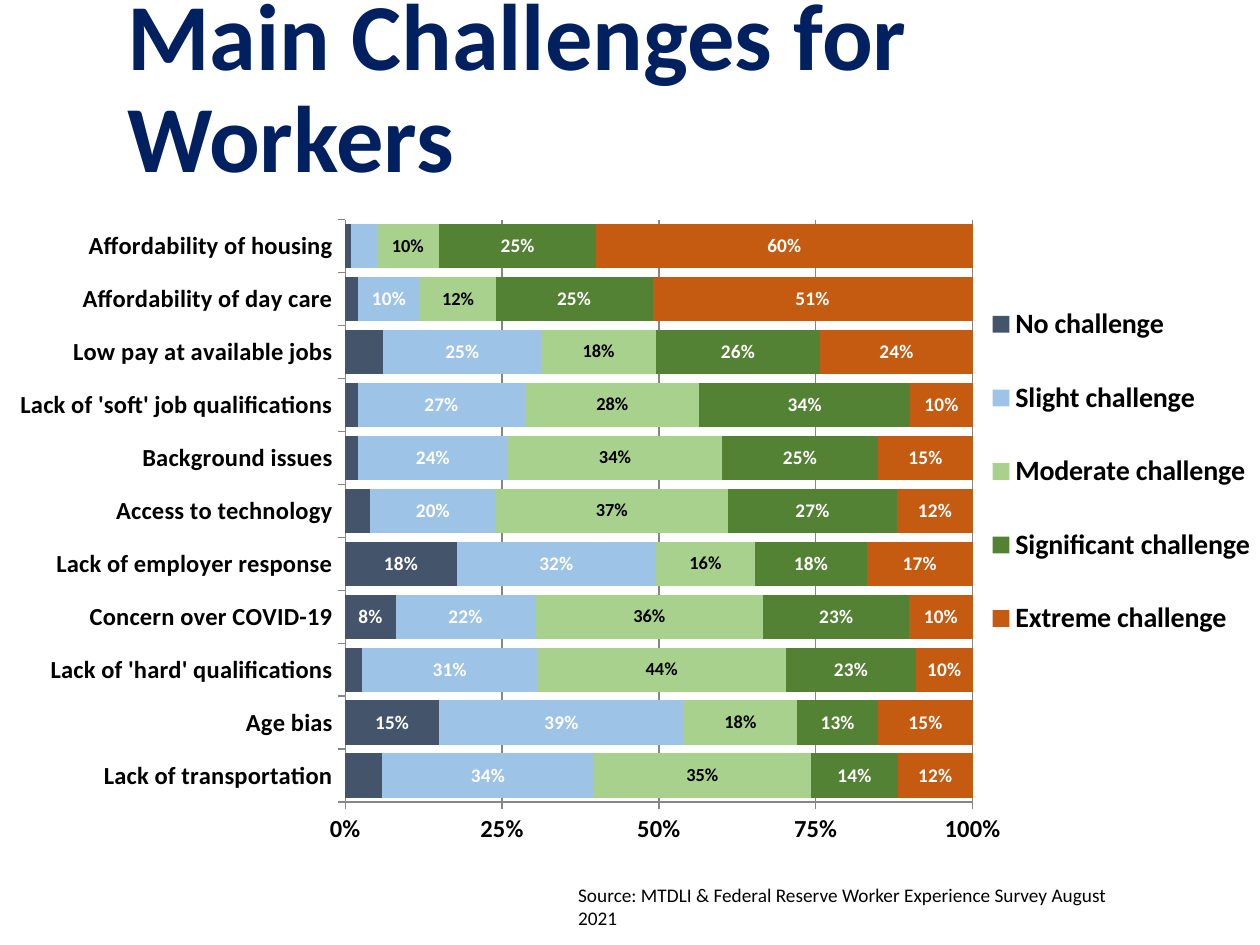
from dataclasses import dataclass

from lxml.etree import SubElement
from pptx import Presentation
from pptx.chart.data import CategoryChartData
from pptx.dml.color import RGBColor
from pptx.enum.chart import XL_CHART_TYPE as ChartType
from pptx.enum.chart import XL_LABEL_POSITION as LabelPosition
from pptx.enum.chart import XL_LEGEND_POSITION as LegendPosition
from pptx.enum.chart import XL_TICK_MARK as TickMark
from pptx.enum.text import MSO_ANCHOR as Anchor
from pptx.enum.text import MSO_AUTO_SIZE as AutoSize
from pptx.enum.text import PP_ALIGN as Align
from pptx.oxml import parse_xml
from pptx.oxml.ns import nsdecls, qn
from pptx.util import Pt


@dataclass(frozen=True)
class Theme:
    font: str = "Calibri"
    navy: str = "002060"
    black: str = "000000"
    white: str = "FFFFFF"
    grid: str = "868686"
    title_size: float = 54
    legend_size: float = 16
    axis_size: float = 14
    label_size: float = 11
    dark_label_size: float = 10.5
    source_size: float = 11


TOPICS = [
    "Lack of transportation", "Age bias", "Lack of 'hard' qualifications",
    "Concern over COVID-19", "Lack of employer response",
    "Access to technology", "Background issues",
    "Lack of 'soft' job qualifications", "Low pay at available jobs",
    "Affordability of day care", "Affordability of housing",
]
# Rating: (fill colour, percentages in topic order)
RATINGS = {
    "No challenge": ("44546A", [6, 15, 3, 8, 18, 4, 2, 2, 6, 2, 1]),
    "Slight challenge": ("9DC3E6", [34, 39, 31, 22, 32, 20, 24, 27, 25, 10, 4]),
    "Moderate challenge": ("A9D18E", [35, 18, 44, 36, 16, 37, 34, 28, 18, 12, 10]),
    "Significant challenge": ("548235", [14, 13, 23, 23, 18, 27, 25, 34, 26, 25, 25]),
    "Extreme challenge": ("C55A11", [12, 15, 10, 10, 17, 12, 15, 10, 24, 51, 60]),
}
DARK_LABEL_RATING = "Moderate challenge"
SMALLEST_LABELLED = 0.08


def set_layout(part, index, x, y, w, h, inner=False):
    """Place a chart part at fractions of the chart area."""
    for old in part.findall(qn("c:layout")):
        part.remove(old)
    layout = parse_xml(f"<c:layout {nsdecls('c')}><c:manualLayout/></c:layout>")
    settings = [("layoutTarget", "inner")] if inner else []
    settings += [("xMode", "edge"), ("yMode", "edge"),
                 ("x", x), ("y", y), ("w", w), ("h", h)]
    for tag, value in settings:
        SubElement(layout[0], qn(f"c:{tag}")).set("val", str(value))
    part.insert(index, layout)


def hide_label(labels, point):
    labels._element.insert(point, parse_xml(
        f'<c:dLbl {nsdecls("c")}><c:idx val="{point}"/>'
        '<c:delete val="1"/></c:dLbl>'))


class SlideBuilder:
    def __init__(self, slide, theme):
        self.slide = slide
        self.theme = theme

    def style(self, font, size, color, bold=False):
        font.name = self.theme.font
        font.size = Pt(size)
        font.bold = bold
        font.color.rgb = RGBColor.from_string(color)

    def title(self, text, left, top, width, height):
        title = self.slide.shapes.title
        title.left, title.top = Pt(left), Pt(top)
        title.width, title.height = Pt(width), Pt(height)
        frame = title.text_frame
        frame.text = text
        frame.word_wrap = True
        frame.auto_size = AutoSize.NONE
        frame.vertical_anchor = Anchor.MIDDLE
        paragraph = frame.paragraphs[0]
        paragraph.alignment = Align.LEFT
        paragraph.line_spacing = 0.9
        self.style(paragraph.runs[0].font, self.theme.title_size,
                   self.theme.navy, bold=True)

    def source(self, text, left, top, width, height):
        box = self.slide.shapes.add_textbox(
            Pt(left), Pt(top), Pt(width), Pt(height))
        frame = box.text_frame
        frame.text = text
        frame.word_wrap = False
        self.style(frame.paragraphs[0].runs[0].font,
                   self.theme.source_size, self.theme.black)

    def ratings_chart(self, topics, ratings, left, top, width, height):
        data = CategoryChartData(number_format="0%")
        data.categories = topics
        for name, (_, percentages) in ratings.items():
            data.add_series(name, [value / 100 for value in percentages])
        chart = self.slide.shapes.add_chart(
            ChartType.BAR_STACKED_100, Pt(left), Pt(top),
            Pt(width), Pt(height), data).chart
        chart.has_title = False
        self.style(chart.font, 10, self.theme.black)

        plot = chart.plots[0]
        plot.gap_width, plot.overlap = 20, 100
        plot.vary_by_categories = False
        for series in plot.series:
            self.rating(series, ratings[series.name][0])
        self.axes(chart)
        self.legend(chart)
        plot_area = chart._chartSpace.chart.plotArea
        set_layout(plot_area, 0, 0.274, 0.048, 0.498, 0.872, inner=True)

    def rating(self, series, color):
        series.format.fill.solid()
        series.format.fill.fore_color.rgb = RGBColor.from_string(color)
        series.invert_if_negative = False
        labels = series.data_labels
        labels.show_value = True
        labels.number_format = "0%"
        labels.number_format_is_linked = False
        labels.position = LabelPosition.CENTER
        theme = self.theme
        if series.name == DARK_LABEL_RATING:
            self.style(labels.font, theme.dark_label_size, theme.black, bold=True)
        else:
            self.style(labels.font, theme.label_size, theme.white, bold=True)
        small = [point for point, value in enumerate(series.values)
                 if value < SMALLEST_LABELLED]
        for position, point in enumerate(small):
            labels._element.insert(position, parse_xml(
                f'<c:dLbl {nsdecls("c")}><c:idx val="{point}"/>'
                '<c:delete val="1"/></c:dLbl>'))

    def axes(self, chart):
        grid_color = RGBColor.from_string(self.theme.grid)
        shares = chart.value_axis
        shares.minimum_scale, shares.maximum_scale = 0, 1
        shares.major_unit = 0.25
        shares.has_major_gridlines = True
        shares.tick_labels.number_format = "0%"
        shares.tick_labels.number_format_is_linked = False
        for axis in (chart.category_axis, shares):
            axis.major_tick_mark = TickMark.OUTSIDE
            axis.minor_tick_mark = TickMark.NONE
            self.style(axis.tick_labels.font, self.theme.axis_size,
                       self.theme.black, bold=True)
        for line in (chart.category_axis.format.line, shares.format.line,
                     shares.major_gridlines.format.line):
            line.color.rgb = grid_color
            line.width = Pt(0.75)

    def legend(self, chart):
        chart.has_legend = True
        legend = chart.legend
        legend.position = LegendPosition.RIGHT
        legend.include_in_layout = False
        self.style(legend.font, self.theme.legend_size,
                   self.theme.black, bold=True)
        set_layout(legend._element, 1, 0.78, 0.12, 0.22, 0.61)


def main():
    deck = Presentation()
    deck.slide_width, deck.slide_height = Pt(720), Pt(540)
    title_only = deck.slide_layouts[5]
    builder = SlideBuilder(deck.slides.add_slide(title_only), Theme())
    builder.title("Main Challenges for Workers", 65.5, 10.8, 643.7, 82)
    builder.source(
        "Source: MTDLI & Federal Reserve Worker Experience Survey August 2021",
        323.3, 501, 340.5, 28)
    builder.ratings_chart(TOPICS, RATINGS, 0, 107.3, 720, 381.6)
    deck.save("out.pptx")


if __name__ == "__main__":
    main()
